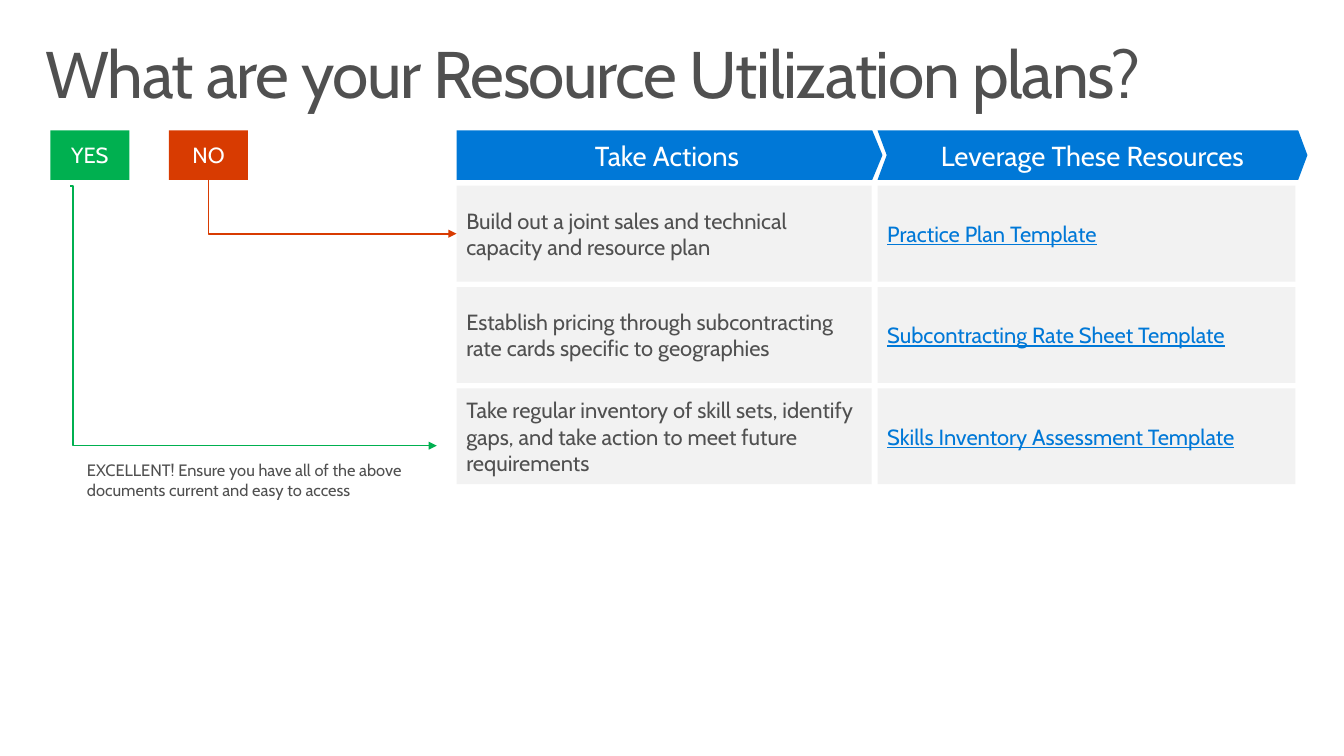
from dataclasses import dataclass

from lxml import etree
from pptx import Presentation
from pptx import util as u
from pptx.dml.color import RGBColor
from pptx.enum import shapes, text
from pptx.oxml.ns import qn

TITLE = "What are your Resource Utilization plans?"
HEADERS = ["Take Actions", "Leverage These Resources"]
ROWS = [
    ("Build out a joint sales and technical capacity and resource plan",
     "Practice Plan Template"),
    ("Establish pricing through subcontracting rate cards specific to geographies",
     "Subcontracting Rate Sheet Template"),
    ("Take regular inventory of skill sets, identify gaps, and take action to meet "
     "future requirements",
     "Skills Inventory Assessment Template"),
]
YES_NOTE = "EXCELLENT! Ensure you have all of the above documents current and easy to access"


@dataclass(frozen=True)
class Theme:
    font: str = "Cabin"
    ink: str = "505050"
    white: str = "FFFFFF"
    blue: str = "0078D7"
    panel: str = "F2F2F2"
    yes: str = "00B050"
    no: str = "D83B01"
    title: int = 48
    header: int = 20
    body: int = 16
    note: int = 12


T = Theme()

# Grid, in inches
COL_X = [4.62, 8.88]
CELL_W = [4.2, 4.23]
HEADER_W = [4.31, 4.35]
HEADER_KIND = [(shapes.MSO_SHAPE.PENTAGON, 0.207), (shapes.MSO_SHAPE.CHEVRON, 0.186)]
HEADER_Y, HEADER_H = 1.32, 0.5
ROW_Y, ROW_H, ROW_PITCH = 1.88, 0.97, 1.025
ANSWER_X, ANSWER_W, ANSWER_PITCH = 0.51, 0.8, 1.2

prs = Presentation()
prs.slide_width, prs.slide_height = u.Inches(13.6), u.Inches(7.65)
s = prs.slides.add_slide(prs.slide_layouts[6])


def write(sp, words, size, color, align=text.PP_ALIGN.LEFT):
    tf = sp.text_frame
    tf.word_wrap = True
    p = tf.paragraphs[0]
    p.alignment = align
    p.add_run().text = words
    p.font.name, p.font.size = T.font, u.Pt(size)
    p.font.color.rgb = RGBColor.from_string(color)
    return p


def text_box(box, words, size, inset_x=0, inset_y=0):
    sp = s.shapes.add_textbox(*map(u.Inches, box))
    tf = sp.text_frame
    tf.margin_left = tf.margin_right = u.Inches(inset_x)
    tf.margin_top = tf.margin_bottom = u.Inches(inset_y)
    return write(sp, words, size, T.ink)


def block(box, words, fill, size, color, align=text.PP_ALIGN.CENTER,
          kind=shapes.MSO_SHAPE.RECTANGLE):
    sp = s.shapes.add_shape(kind, *map(u.Inches, box))
    sp.shadow.inherit = False
    sp.fill.solid()
    sp.fill.fore_color.rgb = RGBColor.from_string(fill)
    sp.line.fill.background()
    sp.text_frame.vertical_anchor = text.MSO_ANCHOR.MIDDLE
    write(sp, words, size, color, align)
    return sp


def elbow_arrow(start, end, color, bend):
    """Elbow whose upright part lies at the share `bend` of its width."""
    c = s.shapes.add_connector(shapes.MSO_CONNECTOR.ELBOW, *map(u.Inches, start + end))
    c.line.color.rgb = RGBColor.from_string(color)
    c.line.width = u.Pt(1.25)
    etree.SubElement(c.line._get_or_add_ln(), qn("a:tailEnd"), type="triangle")
    etree.SubElement(c._element.spPr, qn("a:effectLst"))
    guides = c._element.spPr.find(qn("a:prstGeom")).find(qn("a:avLst"))
    etree.SubElement(guides, qn("a:gd"), name="adj1", fmla=f"val {round(bend * 100000)}")


title = text_box((0.3, 0.32, 13, 1), TITLE, T.title, 0.16, 0.1)
title.line_spacing = 0.9
title.runs[0].font._element.set("spc", "-100")

for x, w, words, (kind, point) in zip(COL_X, HEADER_W, HEADERS, HEADER_KIND):
    header = block((x, HEADER_Y, w, HEADER_H), words, T.blue, T.header, T.white, kind=kind)
    header.adjustments[0] = point

for i, row in enumerate(ROWS):
    for x, w, words, color in zip(COL_X, CELL_W, row, (T.ink, T.blue)):
        cell = block((x, ROW_Y + i * ROW_PITCH, w, ROW_H), words, T.panel, T.body, color,
                     text.PP_ALIGN.LEFT)
        cell.text_frame.paragraphs[0].font.underline = color == T.blue or None

for i, (words, fill) in enumerate([("YES", T.yes), ("NO", T.no)]):
    block((ANSWER_X + i * ANSWER_PITCH, HEADER_Y, ANSWER_W, HEADER_H), words, fill,
          T.body, T.white)

no_middle = ANSWER_X + ANSWER_PITCH + ANSWER_W / 2
elbow_arrow((no_middle, HEADER_Y + HEADER_H), (COL_X[0], ROW_Y + ROW_H / 2), T.no, 0)
elbow_arrow((0.71, ROW_Y), (COL_X[0] - 0.2, 4.51), T.yes, 0.008)
text_box((0.88, 4.66, 3.6, 0.4), YES_NOTE, T.note)

prs.save("out.pptx")
